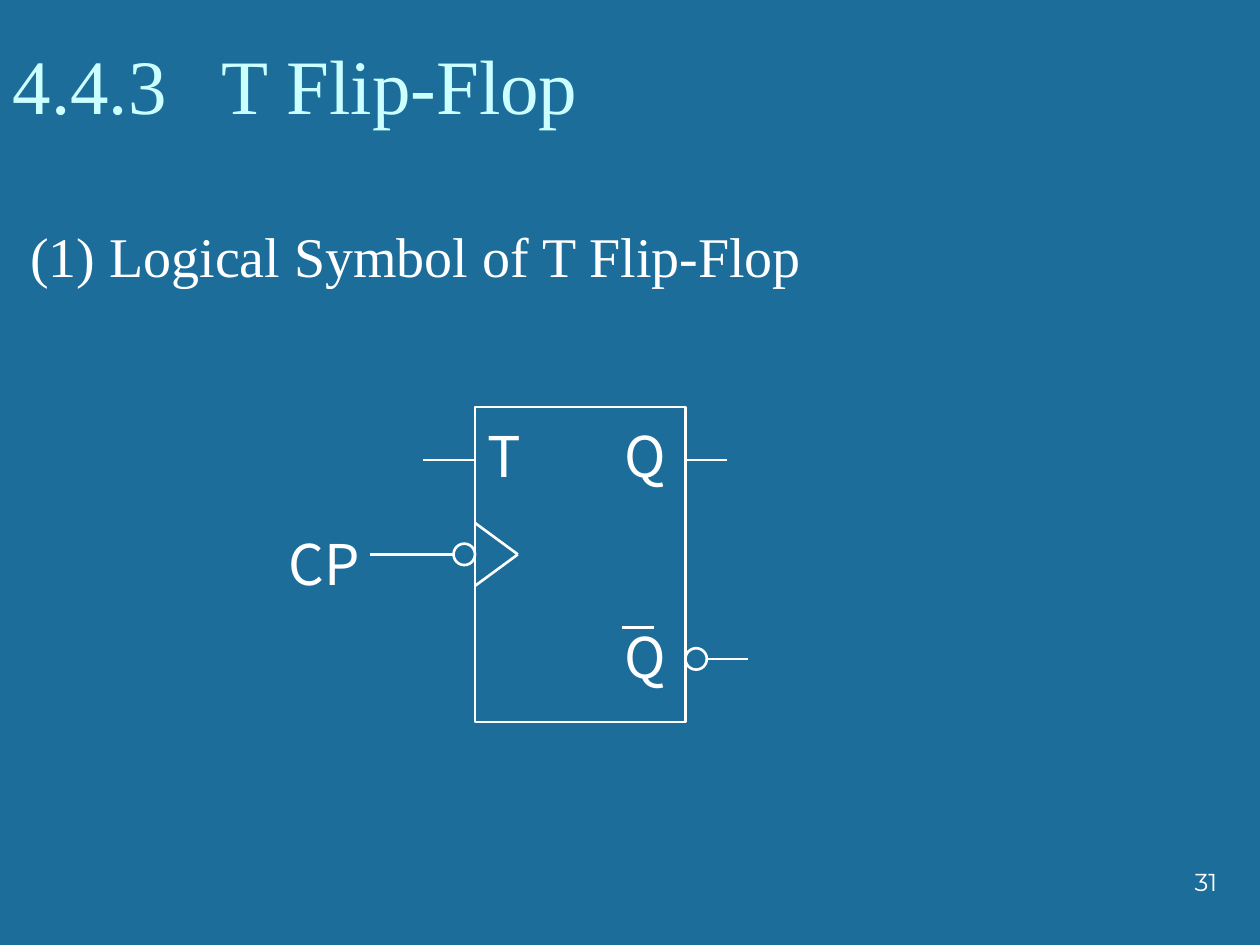
"""Build the T flip-flop logic symbol slide."""
from lxml import etree
from pptx import Presentation
from pptx import util as u
from pptx.dml.color import RGBColor
from pptx.enum import shapes, text
from pptx.oxml.ns import qn

COLORS = {"background": "1C6D9A", "title": "CCFFFF", "ink": "FFFFFF"}
SERIF, SANS, NUMBER = "Times New Roman", "Noto Sans CJK SC", "Montserrat"


def write(sp, box, content, font, size, color="ink", anchor=text.MSO_ANCHOR.TOP,
          align=text.PP_ALIGN.LEFT, wrap=True, fit=text.MSO_AUTO_SIZE.SHAPE_TO_FIT_TEXT):
    sp.left, sp.top, sp.width, sp.height = map(u.Inches, box)
    tf = sp.text_frame
    tf.word_wrap, tf.auto_size, tf.vertical_anchor = wrap, fit, anchor
    p = tf.paragraphs[0]
    p.text, p.alignment = content, align
    r = p.runs[0]
    r.font.name, r.font.size = font, u.Pt(size)
    r.font.color.rgb = RGBColor.from_string(COLORS[color])
    return p


def outline(line):
    line.color.rgb = RGBColor.from_string(COLORS["ink"])
    line.width = u.Pt(1.5)


prs = Presentation()
prs.slide_width, prs.slide_height = u.Inches(10), u.Inches(7.5)
s = prs.slides.add_slide(prs.slide_layouts[5])
s.background.fill.solid()
s.background.fill.fore_color.rgb = RGBColor.from_string(COLORS["background"])

p = write(s.shapes.title, (0, 0.24, 9.58, 0.84), "4.4.3\tT Flip-Flop", SERIF, 44,
          "title", text.MSO_ANCHOR.BOTTOM)
tabs = etree.SubElement(p._p.get_or_add_pPr(), qn("a:tabLst"))
etree.SubElement(tabs, qn("a:tab"), pos=str(u.Inches(1.66)), algn="l")

left, top, width, height = 3.77, 3.23, 1.67, 2.5
right = left + width
input_y, clock_y, inverted_y = 3.65, 4.4, 5.23
bubble = 0.17

for kind, box in (
    (shapes.MSO_SHAPE.RECTANGLE, (left, top, width, height)),
    (shapes.MSO_SHAPE.OVAL, (left - bubble, clock_y - bubble / 2, bubble, bubble)),
    (shapes.MSO_SHAPE.OVAL, (right, inverted_y - bubble / 2, bubble, bubble)),
):
    sp = s.shapes.add_shape(kind, *map(u.Inches, box))
    sp.fill.background()
    sp.shadow.inherit = False
    outline(sp.line)

for ends in (
    (left, clock_y - 0.25, left + 0.34, clock_y),
    (left, clock_y + 0.25, left + 0.34, clock_y),
    (right, input_y, right + 0.33, input_y),
    (right + bubble, inverted_y, right + 0.5, inverted_y),
    (left - bubble, clock_y, 2.94, clock_y),
    (left, input_y, 3.36, input_y),
    (4.94, 4.98, 5.19, 4.98),
):
    wire = s.shapes.add_connector(shapes.MSO_CONNECTOR.STRAIGHT, *map(u.Inches, ends))
    outline(wire.line)
    etree.SubElement(wire._element.spPr, qn("a:effectLst"))

for label, x, y, w in (("T", left, 3.3, 0.42), ("Q", 4.86, 3.3, 0.42),
                       ("Q", 4.86, 4.89, 0.42), ("CP", 2.19, 4.15, 1)):
    write(s.shapes.add_textbox(0, 0, 0, 0), (x, y, w, 0.63), label, SANS, 32,
          wrap=label == "CP")

write(s.shapes.add_textbox(0, 0, 0, 0), (7.68, 6.83, 2.08, 0.5), "31", NUMBER, 14,
      align=text.PP_ALIGN.RIGHT, fit=text.MSO_AUTO_SIZE.NONE)
write(s.shapes.add_textbox(0, 0, 0, 0), (0.14, 1.7, 9.58, 0.64),
      "(1) Logical Symbol of T Flip-Flop", SERIF, 32, anchor=text.MSO_ANCHOR.BOTTOM)

prs.save("out.pptx")
